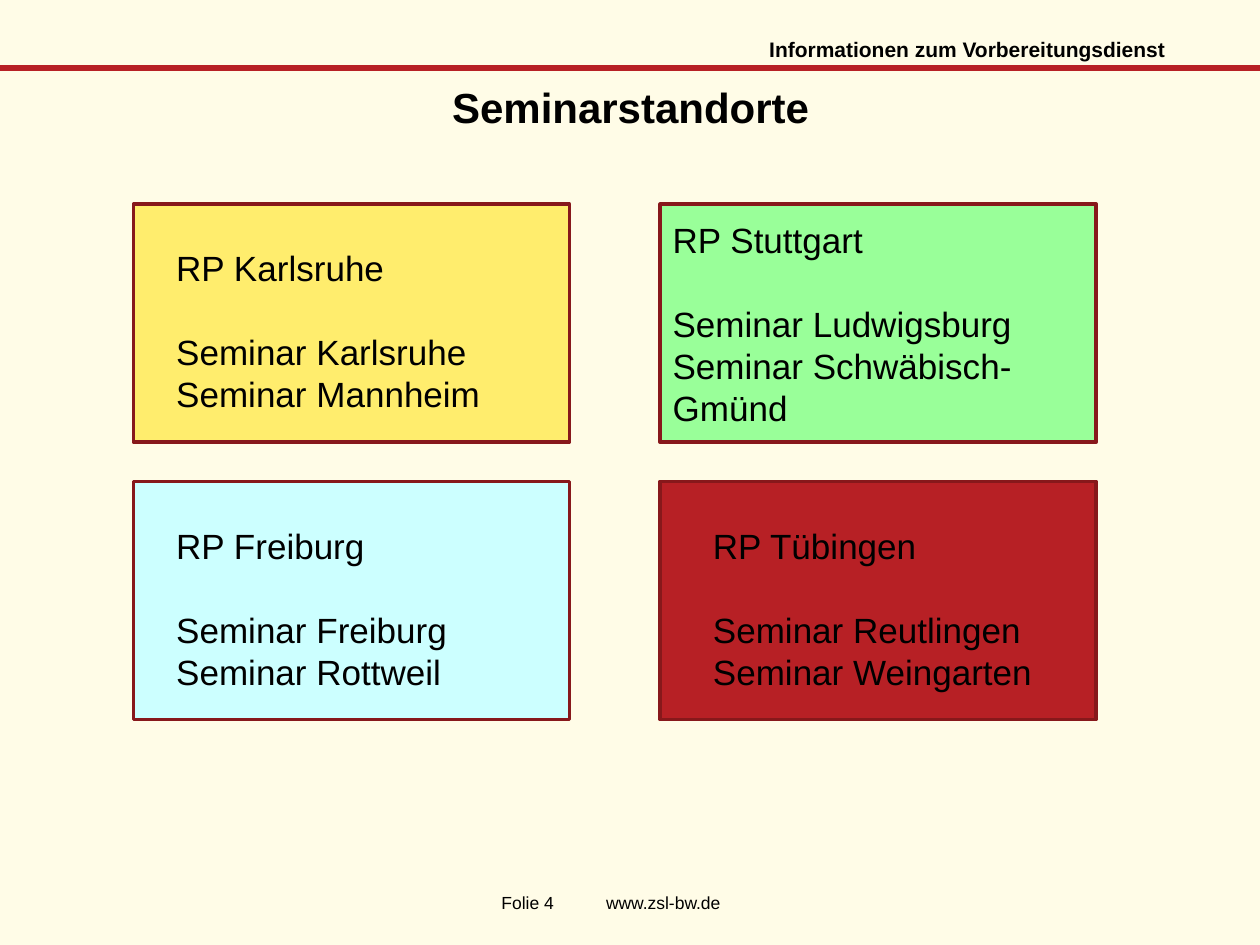
from dataclasses import dataclass

from pptx import Presentation
from pptx.dml.color import RGBColor
from pptx.enum import shapes, text
from pptx.oxml import parse_xml
from pptx.oxml.ns import nsdecls
from pptx.util import Inches, Pt

COLORS = {
    "background": "FFFCE7",
    "text": "000000",
    "red": "B72025",
    "border": "87181B",
    "yellow": "FFED6D",
    "green": "99FF99",
    "blue": "CCFFFF",
}
FONT = "Arial"
CARD_W, CARD_H = 3.46, 1.89
COLUMNS = (1.06, 5.24)
ROWS = (1.62, 3.82)
LABEL_W, LABEL_H, LABEL_DROP = 3.38, 1.45, 0.29


@dataclass
class Region:
    name: str
    seminars: tuple[str, ...]
    col: int
    row: int
    fill: str
    label_indent: float | None


REGIONS = [
    Region("RP Karlsruhe", ("Seminar Karlsruhe", "Seminar Mannheim"), 0, 0, "yellow", 0.24),
    Region("RP Stuttgart", ("Seminar Ludwigsburg", "Seminar Schwäbisch-Gmünd"), 1, 0, "green", None),
    Region("RP Freiburg", ("Seminar Freiburg", "Seminar Rottweil"), 0, 1, "blue", 0.24),
    Region("RP Tübingen", ("Seminar Reutlingen", "Seminar Weingarten"), 1, 1, "red", 0.32),
]


def rgb(name: str) -> RGBColor:
    return RGBColor.from_string(COLORS[name])


def set_font(p, size: float, bold: bool = False) -> None:
    p.font.name = FONT
    p.font.size = Pt(size)
    p.font.bold = bold
    p.font.color.rgb = rgb("text")


def add_rect(s, x: float, y: float, w: float, h: float, fill: str, line: str, width: float):
    sp = s.shapes.add_shape(
        shapes.MSO_SHAPE.RECTANGLE, Inches(x), Inches(y), Inches(w), Inches(h))
    sp.shadow.inherit = False
    sp.fill.solid()
    sp.fill.fore_color.rgb = rgb(fill)
    sp.line.color.rgb = rgb(line)
    sp.line.width = Pt(width)
    return sp


def add_box(s, x: float, y: float, w: float, h: float, inset: float | None = None):
    tf = s.shapes.add_textbox(Inches(x), Inches(y), Inches(w), Inches(h)).text_frame
    tf.word_wrap = True
    if inset is not None:
        tf.margin_left = tf.margin_right = tf.margin_top = tf.margin_bottom = Inches(inset)
    return tf


def write_region(tf, region: Region) -> None:
    tf.text = "\n".join((region.name, *region.seminars))
    for i, p in enumerate(tf.paragraphs):
        p.alignment = text.PP_ALIGN.LEFT
        if i == 1:
            p.space_before = Pt(24)
        set_font(p, 20)


def add_region(s, region: Region) -> None:
    x, y = COLUMNS[region.col], ROWS[region.row]
    card = add_rect(s, x, y, CARD_W, CARD_H, region.fill, "border", 2)
    if region.label_indent is None:
        tf = card.text_frame
        tf.word_wrap = True
        tf.vertical_anchor = text.MSO_ANCHOR.MIDDLE
    else:
        tf = add_box(s, x + region.label_indent, y + LABEL_DROP, LABEL_W, LABEL_H)
    write_region(tf, region)


def add_title(s) -> None:
    title = s.shapes.title
    title.left, title.top = Inches(0.08), Inches(0.6)
    title.width, title.height = Inches(9.85), Inches(0.5)
    tf = title.text_frame
    tf.text = "Seminarstandorte"
    tf.vertical_anchor = text.MSO_ANCHOR.TOP
    p = tf.paragraphs[0]
    p.alignment = text.PP_ALIGN.CENTER
    set_font(p, 24, bold=True)


def add_header(s) -> None:
    add_rect(s, 0, 0.52, 10, 0.04, "red", "red", 0.75)
    tf = add_box(s, 2.64, 0.29, 6.61, 0.2, inset=0)
    tf.text = "Informationen zum Vorbereitungsdienst"
    p = tf.paragraphs[0]
    p.alignment = text.PP_ALIGN.RIGHT
    set_font(p, 12, bold=True)


def add_footer(s) -> None:
    tf = add_box(s, 3.98, 7.08, 1.98, 0.17, inset=0)
    tf.text = "Folie 4\twww.zsl-bw.de"
    p = tf.paragraphs[0]
    tabs = f'<a:tabLst {nsdecls("a")}><a:tab pos="{Inches(0.83)}" algn="l"/></a:tabLst>'
    p._p.get_or_add_pPr().append(parse_xml(tabs))
    set_font(p, 10)


def main() -> None:
    prs = Presentation()
    prs.slide_width, prs.slide_height = Inches(10), Inches(7.5)
    s = prs.slides.add_slide(prs.slide_layouts[5])
    s.background.fill.solid()
    s.background.fill.fore_color.rgb = rgb("background")
    add_header(s)
    add_footer(s)
    add_title(s)
    for region in REGIONS:
        add_region(s, region)
    prs.save("out.pptx")


if __name__ == "__main__":
    main()
